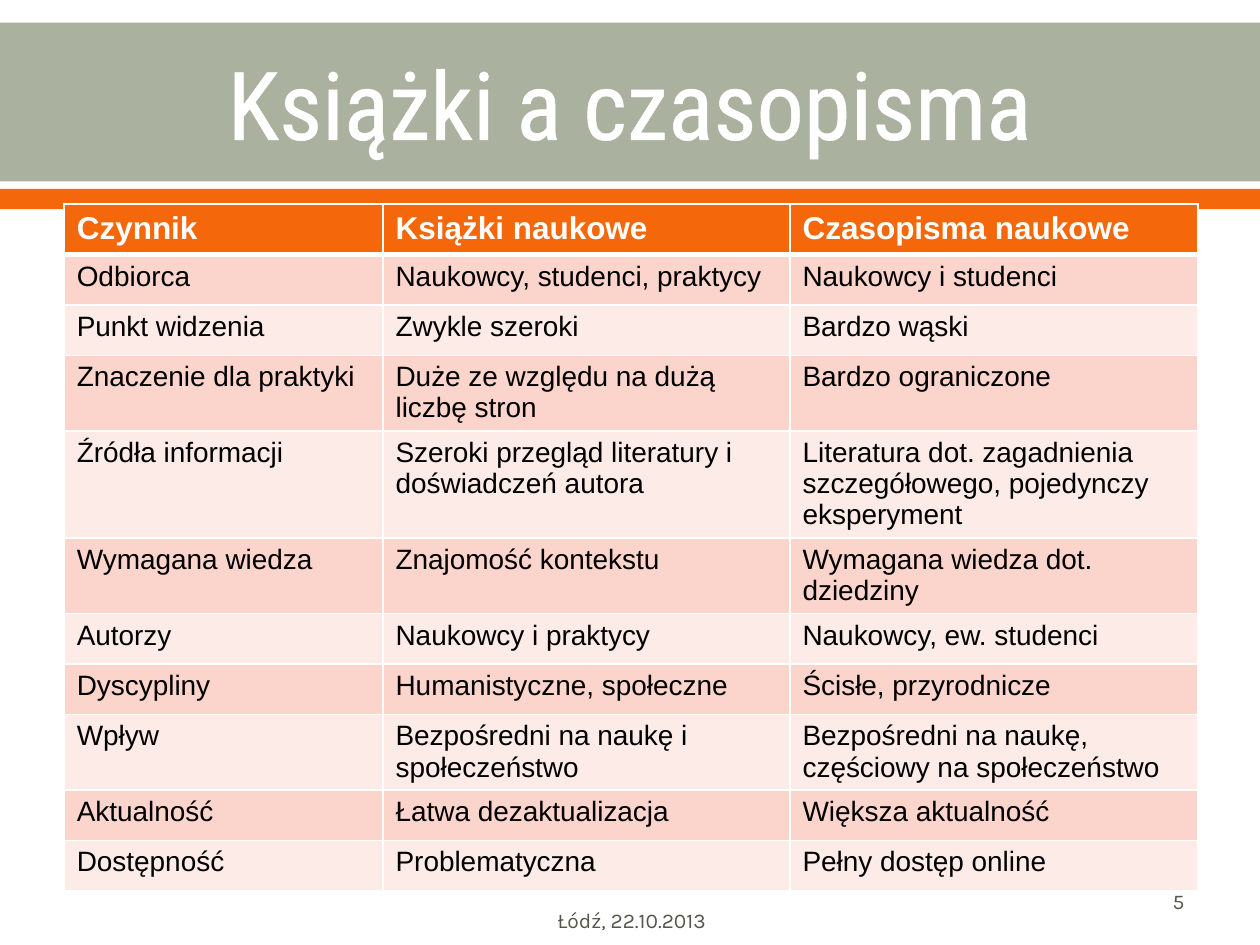
"""Build a slide with a table comparing scholarly books and journals."""
from lxml import etree
from pptx import Presentation
from pptx.dml.color import RGBColor
from pptx.enum.shapes import MSO_SHAPE
from pptx.enum.text import MSO_ANCHOR, PP_ALIGN
from pptx.oxml import parse_xml
from pptx.util import Inches, Pt

RECTANGLE = MSO_SHAPE.RECTANGLE
MIDDLE = MSO_ANCHOR.MIDDLE
CENTER, RIGHT = PP_ALIGN.CENTER, PP_ALIGN.RIGHT
NAMESPACE = "http://schemas.openxmlformats.org/drawingml/2006/main"

COLORS = {
    "white": "FFFFFF", "black": "000000", "sage": "ABB19F", "orange": "F4680B",
    "dark_band": "FBD4CC", "light_band": "FDEBE7", "footer": "55554A",
}
BARS = [("sage", (0, 0.18, 10, 1.26)), ("orange", (0, 1.5, 10, 0.16))]
TITLE = "Książki a czasopisma"
FOOTERS = [
    ("5", (7.17, 6.95, 2.33, 0.4), RIGHT),
    ("Łódź, 22.10.2013", (3.43, 7.1, 3.17, 0.4), CENTER),
]
COLUMN_WIDTHS = [2.53, 3.23, 3.24]
ROW_HEIGHTS = {1: 0.4, 2: 0.6, 3: 0.84}
ROWS = [
    (1, ("Czynnik", "Książki naukowe", "Czasopisma naukowe")),
    (1, ("Odbiorca", "Naukowcy, studenci, praktycy", "Naukowcy i studenci")),
    (1, ("Punkt widzenia", "Zwykle szeroki", "Bardzo wąski")),
    (2, ("Znaczenie dla praktyki", "Duże ze względu na dużą liczbę stron",
         "Bardzo ograniczone")),
    (3, ("Źródła informacji", "Szeroki przegląd literatury i doświadczeń autora",
         "Literatura dot. zagadnienia szczegółowego, pojedynczy eksperyment")),
    (2, ("Wymagana wiedza", "Znajomość kontekstu", "Wymagana wiedza dot. dziedziny")),
    (1, ("Autorzy", "Naukowcy i praktycy", "Naukowcy, ew. studenci")),
    (1, ("Dyscypliny", "Humanistyczne, społeczne", "Ścisłe, przyrodnicze")),
    (2, ("Wpływ", "Bezpośredni na naukę i społeczeństwo",
         "Bezpośredni na naukę, częściowy na społeczeństwo")),
    (1, ("Aktualność", "Łatwa dezaktualizacja", "Większa aktualność")),
    (1, ("Dostępność", "Problematyczna", "Pełny dostęp online")),
]


def rgb(name):
    return RGBColor.from_string(COLORS[name])


def line_xml(tag, color, width):
    line = etree.Element(f"{{{NAMESPACE}}}{tag}", nsmap={"a": NAMESPACE}, w=str(Pt(width)))
    fill = etree.SubElement(line, f"{{{NAMESPACE}}}solidFill")
    etree.SubElement(fill, f"{{{NAMESPACE}}}srgbClr", val=COLORS[color])
    return parse_xml(etree.tostring(line))


def style_font(paragraph, name, size, color, bold=False):
    font = paragraph.font
    font.name, font.size, font.bold = name, Pt(size), bold
    font.color.rgb = rgb(color)


def add_bar(slide, color, box):
    shape = slide.shapes.add_shape(RECTANGLE, *map(Inches, box))
    shape.shadow.inherit = False
    shape.fill.solid()
    shape.fill.fore_color.rgb = rgb(color)
    shape.line.fill.background()


def add_text(slide, text, box, alignment, name, size, color):
    frame = slide.shapes.add_textbox(*map(Inches, box)).text_frame
    frame.word_wrap = True
    frame.vertical_anchor = MIDDLE
    paragraph = frame.paragraphs[0]
    paragraph.text = text
    paragraph.alignment = alignment
    style_font(paragraph, name, size, color)
    return paragraph


def fill_cell(cell, text, row):
    header = row == 0
    cell.text = text
    cell.margin_bottom = 0
    style_font(cell.text_frame.paragraphs[0], "Arial", 18 if header else 16,
               "white" if header else "black", header)
    cell.fill.solid()
    band = "dark_band" if row % 2 else "light_band"
    cell.fill.fore_color.rgb = rgb("orange" if header else band)
    widths = {"lnL": 1, "lnR": 1, "lnT": 3 if row == 1 else 1, "lnB": 3 if header else 1}
    properties = cell._tc.get_or_add_tcPr()
    for index, (tag, width) in enumerate(widths.items()):
        properties.insert(index, line_xml(tag, "white", width))


def add_comparison(slide):
    heights = [ROW_HEIGHTS[lines] for lines, _ in ROWS]
    table = slide.shapes.add_table(
        len(ROWS), len(COLUMN_WIDTHS), Inches(0.51), Inches(1.62),
        Inches(sum(COLUMN_WIDTHS)), Inches(sum(heights))).table
    for column, width in zip(table.columns, COLUMN_WIDTHS):
        column.width = Inches(width)
    for row, (_, texts) in enumerate(ROWS):
        table.rows[row].height = Inches(heights[row])
        for column, text in enumerate(texts):
            fill_cell(table.cell(row, column), text, row)


def main():
    presentation = Presentation()
    presentation.slide_width, presentation.slide_height = Inches(10), Inches(7.5)
    slide = presentation.slides.add_slide(presentation.slide_layouts[6])
    for color, box in BARS:
        add_bar(slide, color, box)
    title = add_text(slide, TITLE, (0.5, 0.2, 9, 1.22), CENTER, "Roboto Condensed", 54, "white")
    title.runs[0]._r.get_or_add_rPr().insert(0, line_xml("ln", "white", 1.1))
    add_comparison(slide)
    for text, box, alignment in FOOTERS:
        add_text(slide, text, box, alignment, "Karla", 12, "footer")
    presentation.save("out.pptx")


if __name__ == "__main__":
    main()
